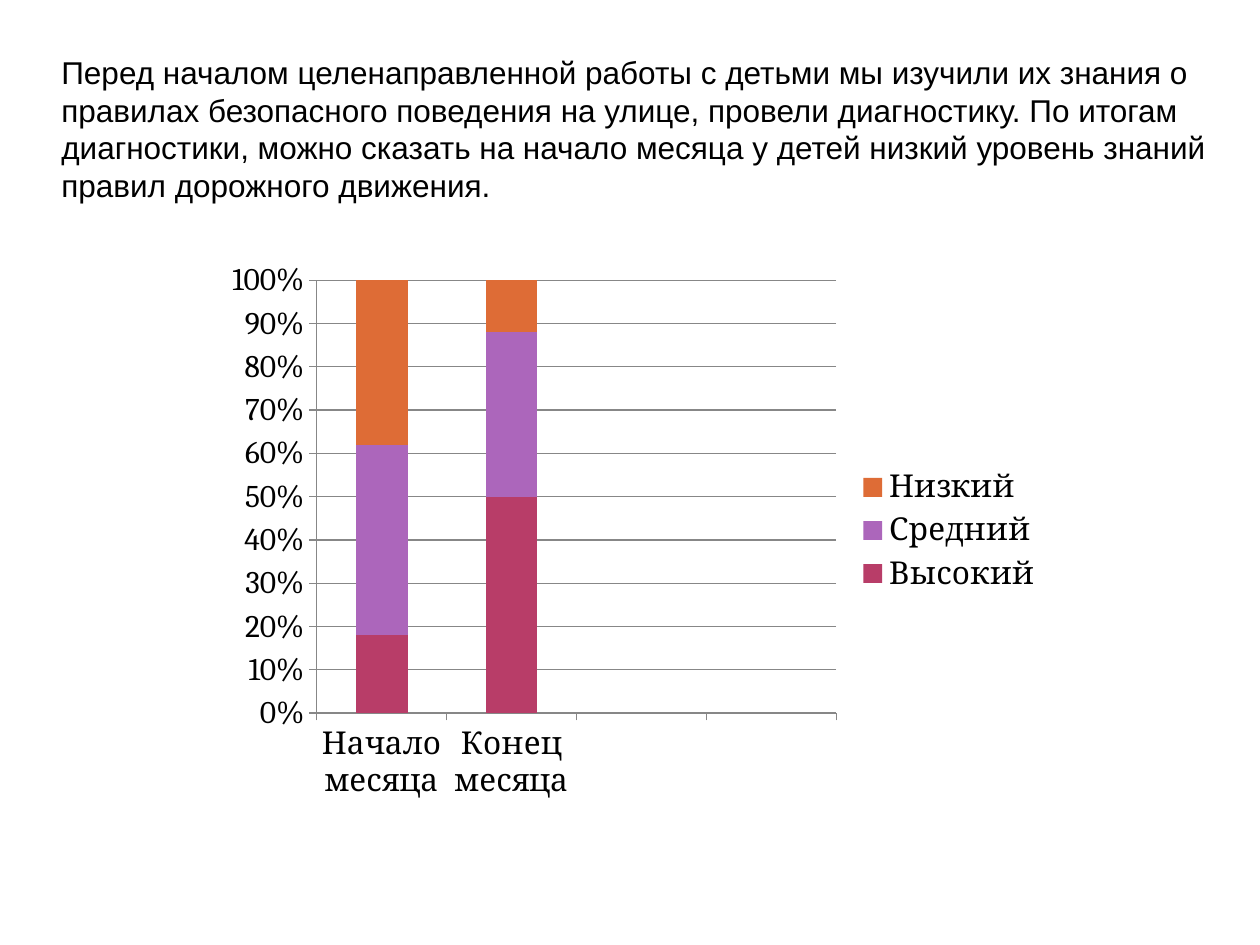
from pptx import Presentation
from pptx.chart.data import CategoryChartData
from pptx.dml.color import RGBColor
from pptx.enum.chart import XL_CHART_TYPE, XL_LEGEND_POSITION, XL_TICK_MARK
from pptx.enum.text import MSO_ANCHOR
from pptx.util import Pt

STACKED = XL_CHART_TYPE.COLUMN_STACKED_100
LEGEND_RIGHT = XL_LEGEND_POSITION.RIGHT
TICK_OUTSIDE = XL_TICK_MARK.OUTSIDE
ANCHOR_TOP = MSO_ANCHOR.TOP

COLORS = {
    "text": "000000",
    "line": "878787",
    "Высокий": "B83D68",
    "Средний": "AC66BB",
    "Низкий": "DE6C36",
}
INTRODUCTION = (
    "Перед началом целенаправленной работы с детьми мы изучили их знания о "
    "правилах безопасного поведения на улице, провели диагностику. По итогам "
    "диагностики, можно сказать на начало месяца у детей низкий уровень знаний "
    "правил дорожного движения."
)
PERIODS = ["Начало месяца", "Конец месяца", "", ""]
LEVELS = [
    ("Высокий", (18, 50, None, None)),
    ("Средний", (44, 38, None, None)),
    ("Низкий", (38, 12, None, None)),
]
TEXT_BOX = (28, 26.6, 669.6, 116.6)
CHART_BOX = (123.1, 143.3, 480.2, 319.7)


def color(name):
    return RGBColor.from_string(COLORS[name])


def set_font(font, name):
    font.name = name
    font.size = Pt(18)
    font.color.rgb = color("text")


def add_introduction(slide):
    frame = slide.shapes.add_textbox(*map(Pt, TEXT_BOX)).text_frame
    frame.word_wrap = True
    frame.vertical_anchor = ANCHOR_TOP
    run = frame.paragraphs[0].add_run()
    run.text = INTRODUCTION
    set_font(run.font, "Arial")


def add_level_chart(slide):
    data = CategoryChartData()
    data.categories = PERIODS
    for name, values in LEVELS:
        data.add_series(name, values)
    chart = slide.shapes.add_chart(STACKED, *map(Pt, CHART_BOX), data).chart
    set_font(chart.font, "Cambria")
    chart.has_title = False
    chart.has_legend = True
    chart.legend.position = LEGEND_RIGHT
    chart.legend.include_in_layout = False

    plot = chart.plots[0]
    plot.vary_by_categories = False
    plot.gap_width = 150
    plot.overlap = 100
    for series in plot.series:
        series.format.fill.solid()
        series.format.fill.fore_color.rgb = color(series.name)

    value_axis = chart.value_axis
    value_axis.has_major_gridlines = True
    value_axis.maximum_scale = 1
    value_axis.minimum_scale = 0
    value_axis.major_unit = 0.1
    value_axis.tick_labels.number_format = "0%"
    value_axis.tick_labels.number_format_is_linked = False
    for axis in (chart.category_axis, value_axis):
        axis.major_tick_mark = TICK_OUTSIDE
    for part in (chart.category_axis, value_axis, value_axis.major_gridlines):
        part.format.line.color.rgb = color("line")
        part.format.line.width = Pt(0.75)


def main():
    presentation = Presentation()
    presentation.slide_width = Pt(720)
    presentation.slide_height = Pt(540)
    slide = presentation.slides.add_slide(presentation.slide_layouts[6])
    add_introduction(slide)
    add_level_chart(slide)
    presentation.save("out.pptx")


if __name__ == "__main__":
    main()
